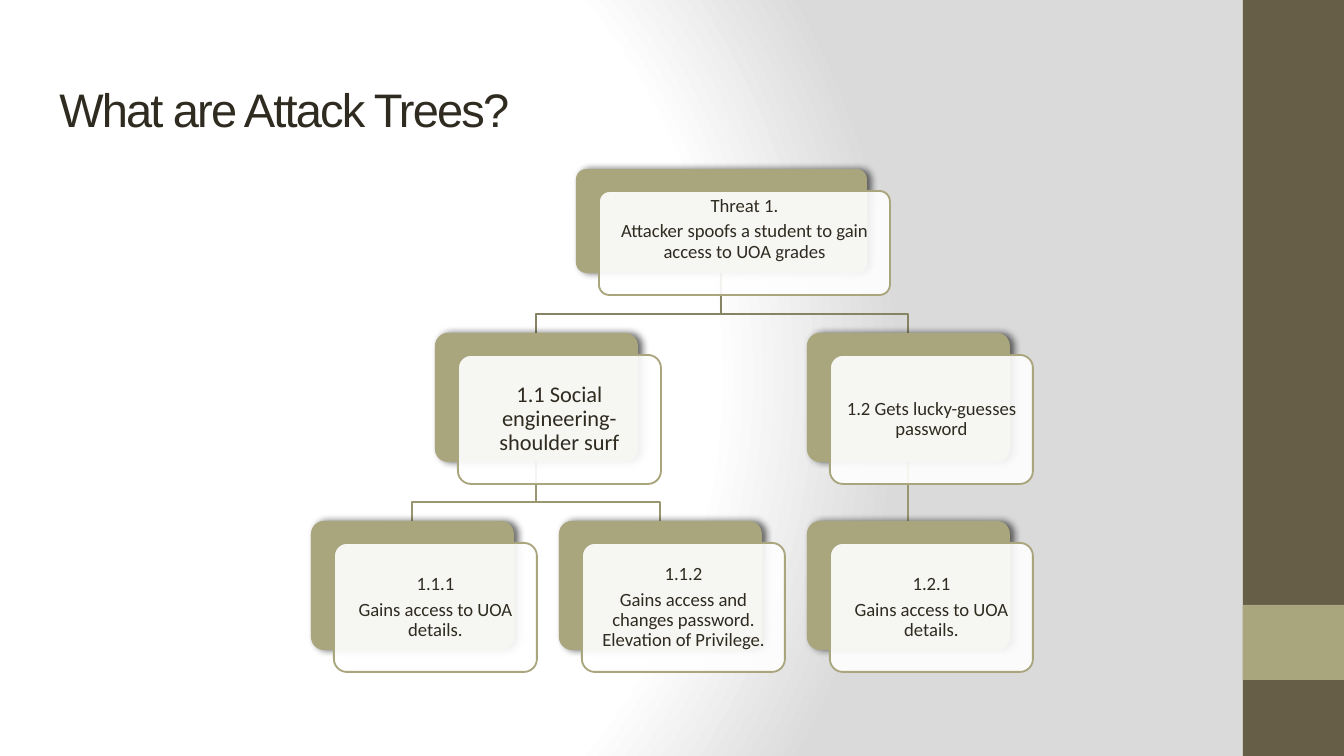
from pptx import Presentation
from pptx import util as u
from pptx.dml import color
from pptx.enum import shapes, text
from pptx.oxml import parse_xml
from pptx.oxml import ns

SCALE = 914400 / 134.4
INK, OLIVE, BROWN, WHITE = "2F2B20", "A9A57C", "675E47", "FFFFFF"
CARD_SHIFT = (23, 22)
NODE_SIZE = (203, 129)
ROOT_SIZE = (291, 104)
BRANCH_DROP = 19
COLUMNS = (311, 435, 559, 807)
ROWS = (169, 333, 521)

NODES = {
    "threat": (None, 576, ROWS[0], ROOT_SIZE, 10, 28,
               ["Threat 1.", "Attacker spoofs a student to gain access to UOA grades"]),
    "social": ("threat", COLUMNS[1], ROWS[1], NODE_SIZE, 12, 0,
               ["1.1 Social engineering- shoulder surf"]),
    "access": ("social", COLUMNS[0], ROWS[2], NODE_SIZE, 10, 0,
               ["1.1.1", "Gains access to UOA details."]),
    "privilege": ("social", COLUMNS[2], ROWS[2], NODE_SIZE, 10, 0,
                  ["1.1.2", "Gains access and changes password. Elevation of Privilege."]),
    "guess": ("threat", COLUMNS[3], ROWS[1], NODE_SIZE, 10, 0,
              ["1.2 Gets lucky-guesses password"]),
    "guess_access": ("guess", COLUMNS[3], ROWS[2], NODE_SIZE, 10, 0,
                     ["1.2.1", "Gains access to UOA details."]),
}
BRANCH_COLORS = {"threat": "878463", "social": "999671", "guess": "999671"}


def px(length):
    return u.Emu(round(length * SCALE))


def rgb(value):
    return color.RGBColor.from_string(value)


def xml(tag, body="", attributes=""):
    return parse_xml(f"<{tag} {ns.nsdecls('a', 'p')} {attributes}>{body}</{tag}>")


def paint_background(slide):
    stops = "".join(
        f'<a:gs pos="{position}"><a:srgbClr val="{shade}"/></a:gs>'
        for position, shade in ((0, WHITE), (75000, WHITE), (100000, "DADADA")))
    focus = '<a:fillToRect l="20000" t="50000" r="100000" b="50000"/>'
    slide._element.cSld.insert(0, xml("p:bg", (
        f'<p:bgPr><a:gradFill rotWithShape="1"><a:gsLst>{stops}</a:gsLst>'
        f'<a:path path="circle">{focus}</a:path></a:gradFill><a:effectLst/></p:bgPr>')))


def add_block(slide, box, fill, preset=shapes.MSO_SHAPE.RECTANGLE):
    block = slide.shapes.add_shape(preset, *map(px, box))
    block.shadow.inherit = False
    block.fill.solid()
    block.fill.fore_color.rgb = rgb(fill)
    block.line.fill.background()
    if preset == shapes.MSO_SHAPE.ROUNDED_RECTANGLE:
        block.adjustments[0] = 0.1
    return block


def add_sidebar(slide, box):
    left, top, width, height = box
    add_block(slide, box, BROWN)
    add_block(slide, (left, top + 605, width, 75), OLIVE)


def format_run(run, font, size):
    run.font.name = font
    run.font.size = u.Pt(size)
    run.font.color.rgb = rgb(INK)


def add_title(slide, box):
    title = slide.shapes.title
    title.left, title.top, title.width, title.height = map(px, box)
    frame = title.text_frame
    frame.text = "What are Attack Trees?"
    frame.vertical_anchor = text.MSO_ANCHOR.MIDDLE
    frame.auto_size = text.MSO_AUTO_SIZE.NONE
    frame.paragraphs[0].alignment = text.PP_ALIGN.LEFT
    heading = frame.paragraphs[0].runs[0]
    format_run(heading, "Arial", 25.2)
    heading.font._element.set("spc", "-100")


def add_node(slide, box, size, lift, lines):
    left, top, width, height = box
    rounded = shapes.MSO_SHAPE.ROUNDED_RECTANGLE
    backing = add_block(slide, box, OLIVE, rounded)
    backing._element.spPr.find(ns.qn("a:effectLst")).append(xml(
        "a:outerShdw",
        '<a:srgbClr val="000000"><a:alpha val="60000"/></a:srgbClr>',
        'blurRad="50800" dist="25400" dir="0" algn="ctr" rotWithShape="0"'))

    card_box = (left + CARD_SHIFT[0], top + CARD_SHIFT[1], width, height)
    card = add_block(slide, card_box, WHITE, rounded)
    card._element.spPr.find(ns.qn("a:solidFill"))[0].append(
        xml("a:alpha", attributes='val="90000"'))
    card.line.color.rgb = rgb(OLIVE)
    card.line.width = u.Pt(1)

    frame = card.text_frame
    frame.word_wrap = True
    frame.vertical_anchor = text.MSO_ANCHOR.MIDDLE
    frame.margin_left = frame.margin_right = px(8)
    frame.margin_top, frame.margin_bottom = px(8), px(8 + lift)
    frame.text = "\n".join(lines)
    for paragraph in frame.paragraphs:
        paragraph.alignment = text.PP_ALIGN.CENTER
        paragraph.line_spacing = 0.9
        paragraph.space_after = u.Pt(3)
        format_run(paragraph.runs[0], "Calibri", size)


def add_branch(slide, start, end, shade):
    (start_x, start_y), (end_x, end_y) = start, end
    if start_x == end_x:
        branch = slide.shapes.add_connector(
            shapes.MSO_CONNECTOR.STRAIGHT, *map(px, (*start, *end)))
        branch._element.spPr.append(xml("a:effectLst"))
    else:
        bend = end_y - BRANCH_DROP
        outline = slide.shapes.build_freeform(px(start_x), px(start_y))
        corners = ((start_x, bend), (end_x, bend), end)
        outline.add_line_segments([(px(x), px(y)) for x, y in corners], close=False)
        branch = outline.convert_to_shape()
        branch.shadow.inherit = False
        branch.fill.background()
    branch.line.color.rgb = rgb(shade)
    branch.line.width = u.Pt(1)


def add_attack_tree(slide):
    for parent, left, top, (width, _), *_ in NODES.values():
        if parent:
            _, parent_left, parent_top, (parent_width, parent_height), *_ = NODES[parent]
            start = (parent_left + parent_width // 2, parent_top + parent_height)
            add_branch(slide, start, (left + width // 2, top), BRANCH_COLORS[parent])
    for _, left, top, extent, size, lift, lines in NODES.values():
        add_node(slide, (left, top, *extent), size, lift, lines)


def main():
    deck = Presentation()
    deck.slide_width, deck.slide_height = px(1344), px(756)
    slide = deck.slides.add_slide(deck.slide_layouts[5])
    paint_background(slide)
    add_sidebar(slide, (1243, 0, 101, 756))
    add_title(slide, (46, 66, 1253, 85))
    add_attack_tree(slide)
    deck.save("out.pptx")


if __name__ == "__main__":
    main()
